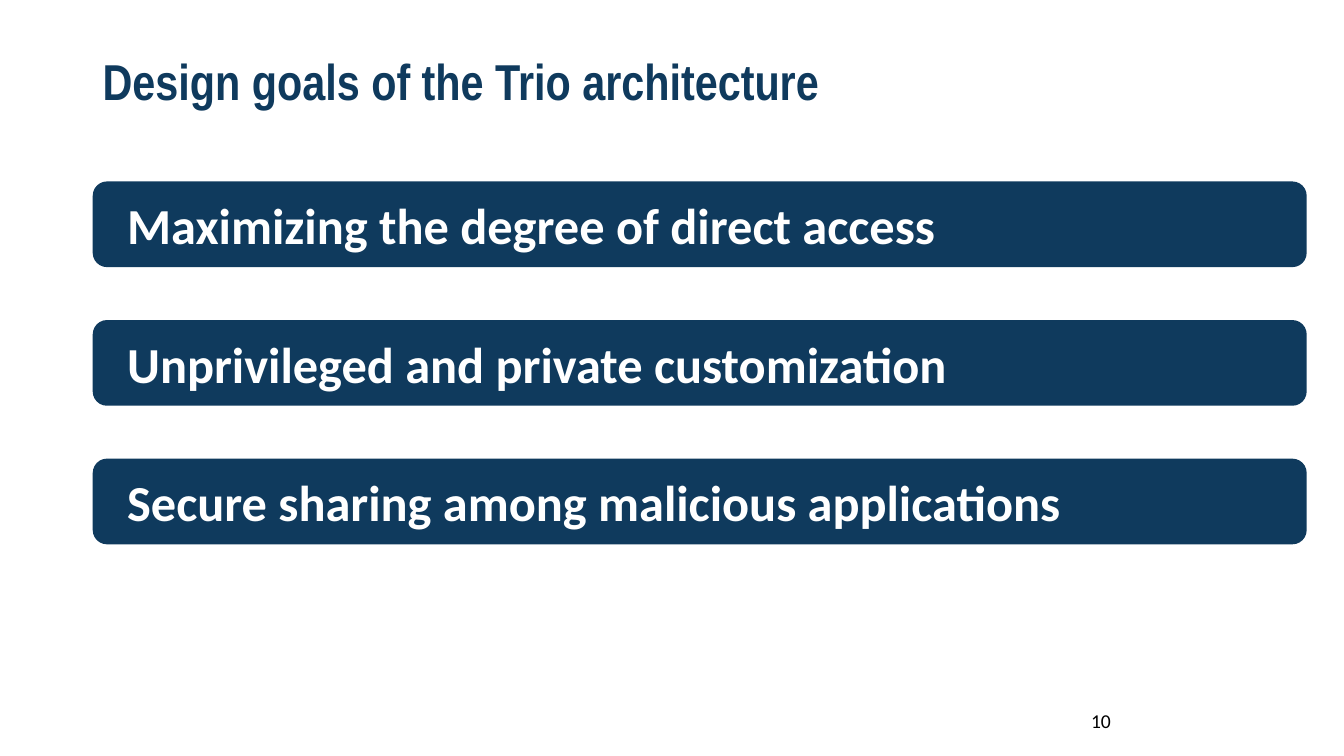
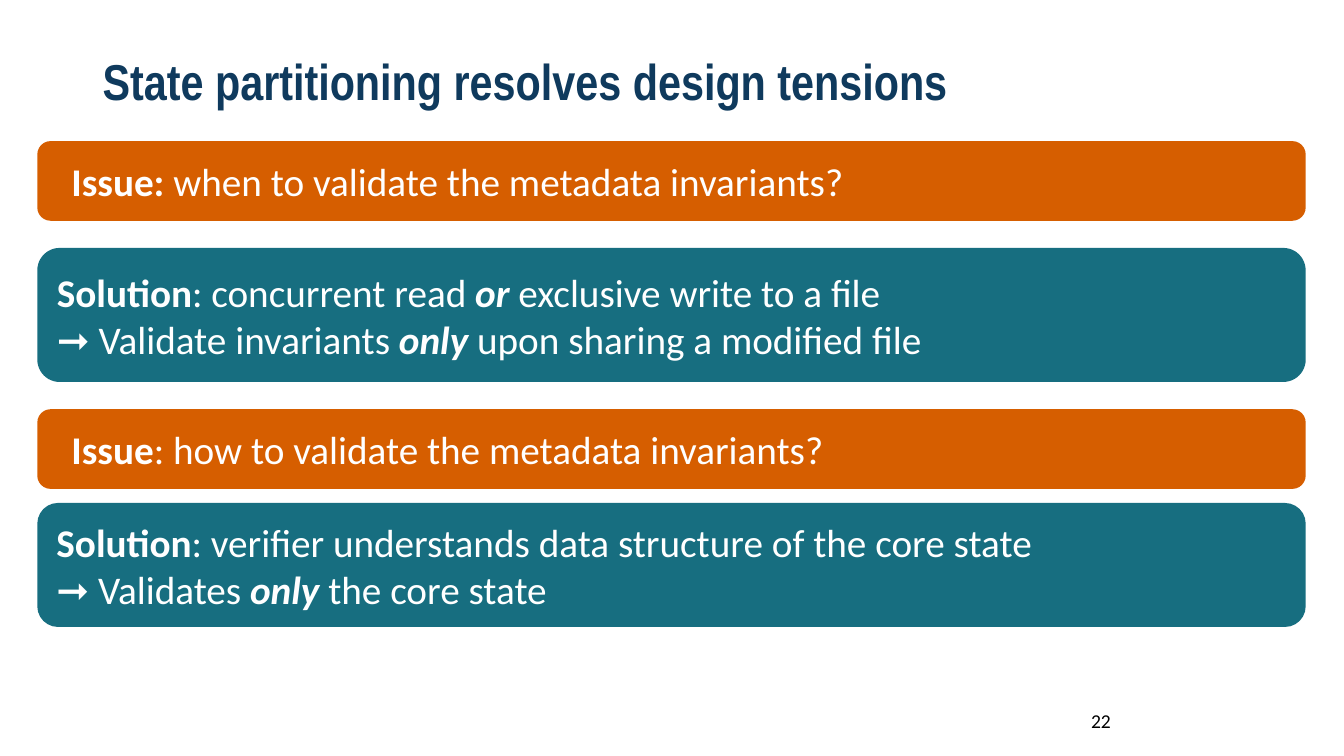
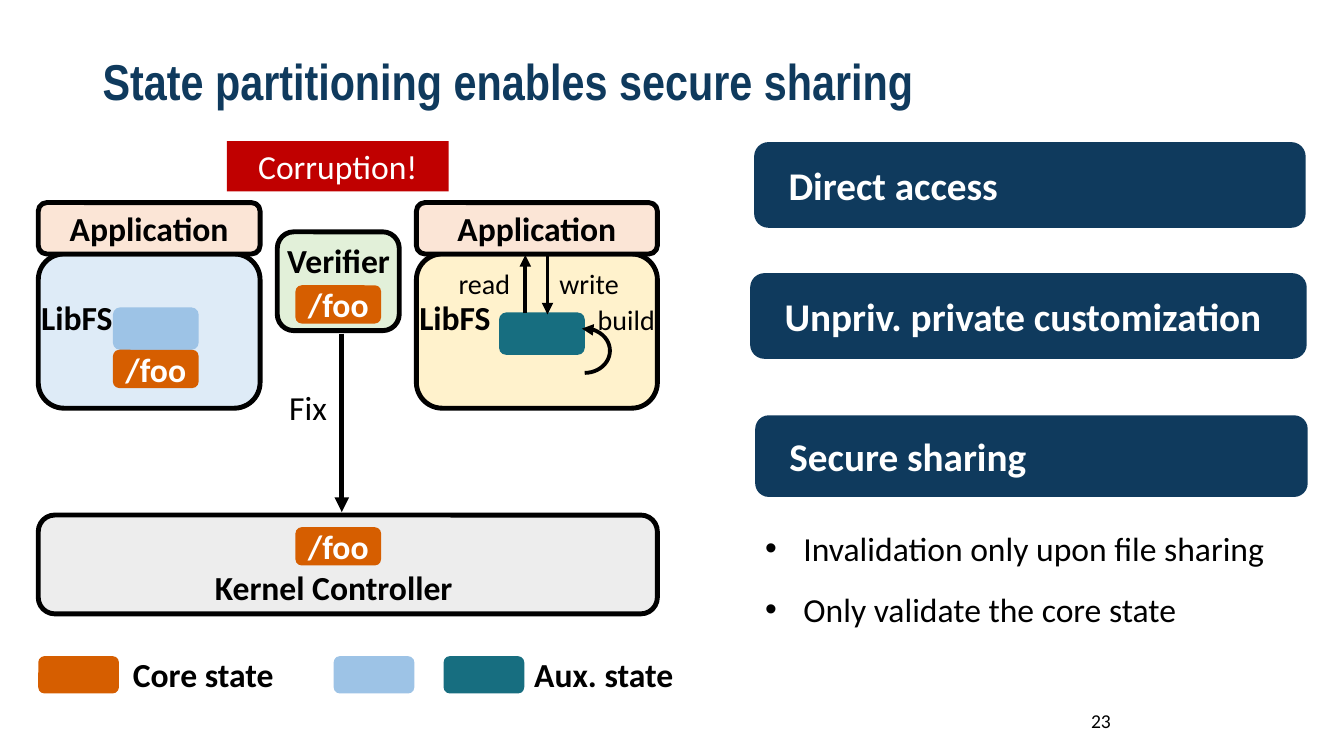
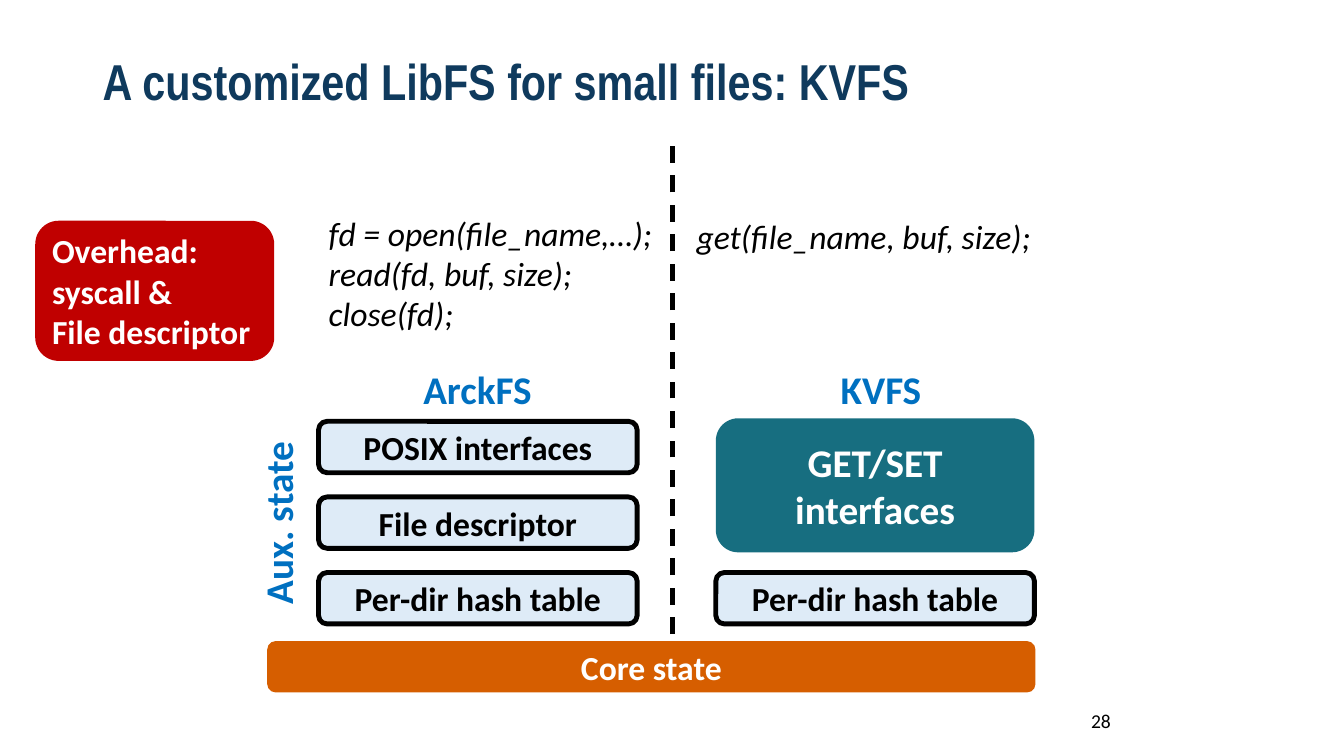
from lxml import etree
from pptx import Presentation
from pptx import util as u
from pptx.dml.color import RGBColor
from pptx.enum import dml, shapes, text
from pptx.oxml.ns import qn

NAVY, TEAL, ORANGE, RED = "0F3A5D", "176E80", "D65E00", "C00000"
SKY, ICE, CREAM, PEACH = "9DC3E6", "DEEBF7", "FFF2CC", "FBE5D6"
MINT, GREY, BLUE = "E2F0D9", "EDEDED", "0070C0"
BLACK, WHITE = "000000", "FFFFFF"
PLAIN_INSETS, BAND_INSETS, SOLUTION_INSETS = (0.1, 0.05), (0.3, 0.05), (0.13, 0.13)
LEFT, CENTER = text.PP_ALIGN.LEFT, text.PP_ALIGN.CENTER
TOP, MIDDLE = text.MSO_ANCHOR.TOP, text.MSO_ANCHOR.MIDDLE
BOLD, REGULAR = {"bold": True}, {}
STRESS = {"bold": True, "italic": True}
FRAME_WIDTH = 3.5


def rgb(color):
    """Turn a hex string into a colour."""
    return RGBColor.from_string(color)


def inside(box, left, top, width, height):
    """Return a box measured from the corner of another one."""
    return box[0] + left, box[1] + top, width, height


def write(frame, paragraphs, size, color, align=LEFT, anchor=MIDDLE,
          insets=PLAIN_INSETS, right=0.1, spacing=None, name="Calibri", **style):
    """Fill a text frame; a paragraph is a string or a list of (words, style)."""
    side, edge = insets
    layout = {"word_wrap": True, "vertical_anchor": anchor,
              "margin_left": u.Inches(side), "margin_right": u.Inches(right),
              "margin_top": u.Inches(edge), "margin_bottom": u.Inches(edge)}
    for key, value in layout.items():
        setattr(frame, key, value)
    for index, content in enumerate(paragraphs):
        paragraph = frame.add_paragraph() if index else frame.paragraphs[0]
        paragraph.alignment = align
        if spacing:
            paragraph.line_spacing = spacing
        runs = [(content, style)] if isinstance(content, str) else content
        for words, accent in runs:
            run = paragraph.add_run()
            run.text = words
            run.font.color.rgb = rgb(color)
            for key, value in {"name": name, "size": u.Pt(size), **accent}.items():
                setattr(run.font, key, value)


def label(slide, box, words, size=24, color=BLACK, anchor=TOP, **options):
    """Place free text, one paragraph for each item when given a list."""
    caption = slide.shapes.add_textbox(*map(u.Inches, box))
    paragraphs = [words] if isinstance(words, str) else words
    write(caption.text_frame, paragraphs, size, color, anchor=anchor, **options)
    return caption


def block(slide, box, fill, paragraphs=(), size=24, color=WHITE, framed=False,
          kind=shapes.MSO_SHAPE.ROUNDED_RECTANGLE, **options):
    """Draw a filled block, with a black frame or without a line."""
    body = slide.shapes.add_shape(kind, *map(u.Inches, box))
    body.shadow.inherit = False
    body.fill.solid()
    body.fill.fore_color.rgb = rgb(fill)
    if framed:
        body.line.color.rgb = rgb(BLACK)
        body.line.width = u.Pt(FRAME_WIDTH)
    else:
        body.line.fill.background()
    write(body.text_frame, paragraphs, size, color, **options)


def badge(slide, box, fill, words, color=WHITE, framed=False, size=24):
    """Draw a block with one centred bold caption."""
    block(slide, box, fill, [words], size, color, framed, align=CENTER, bold=True)


def band(slide, box, fill, content, size=28):
    """Draw a wide band whose text is indented from the left."""
    block(slide, box, fill, [content], size, insets=BAND_INSETS, bold=True)


def add_arrowhead(outline):
    """Put a triangle at the end of an outlined shape."""
    etree.SubElement(outline.line._get_or_add_ln(), qn("a:tailEnd"), type="triangle")


def rule(slide, start, end, width, arrow=True, dash=None):
    """Draw a straight black line or arrow."""
    stroke = slide.shapes.add_connector(
        shapes.MSO_CONNECTOR.STRAIGHT, *map(u.Inches, start + end))
    stroke.line.color.rgb = rgb(BLACK)
    stroke.line.width = u.Pt(width)
    if dash:
        stroke.line.dash_style = dash
    if arrow:
        add_arrowhead(stroke)
    etree.SubElement(stroke._element.spPr, qn("a:effectLst"))


def loop_arrow(slide, box):
    """Draw the half-round arrow that turns back upwards."""
    arc = slide.shapes.add_shape(shapes.MSO_SHAPE.ARC, *map(u.Inches, box))
    arc.shadow.inherit = False
    arc.adjustments[0], arc.adjustments[1] = 162, 58.275
    arc.fill.background()
    arc.line.color.rgb = rgb(BLACK)
    arc.line.width = u.Pt(2.75)
    arc._element.spPr.find(qn("a:xfrm")).set("flipV", "1")
    add_arrowhead(arc)


def start_slide(deck, title, number):
    """Add a blank slide with its title and page number."""
    slide = deck.slides.add_slide(deck.slide_layouts[6])
    label(slide, (0.92, 0.4, 12.04, 0.87), title, 36, NAVY, MIDDLE,
          spacing=0.9, name="Arial Narrow", bold=True)
    label(slide, (9.42, 6.95, 3, 0.4), str(number), 14, anchor=MIDDLE, align=CENTER)
    return slide


def goal_list(slide, box, goals):
    """Stack the design goals at an equal pitch."""
    left, top, width, height = box
    pitch = 1.375
    for row, goal in enumerate(goals):
        band(slide, (left, top + row * pitch, width, height), NAVY, goal, 36)


def issue_pair(slide, box, gap, issue, solution):
    """Place an issue band and the solution under it, filling the box."""
    left, top, width, height = box
    issue_height = 0.79
    band(slide, (left, top, width, issue_height), ORANGE, issue)
    offset = issue_height + gap
    block(slide, (left, top + offset, width, height - offset), TEAL, solution, 28,
          insets=SOLUTION_INSETS, right=0.13)


def process(slide, box, fill):
    """Draw an application on top of its library file system."""
    left, top, width, height = box
    header = 0.51
    block(slide, (left, top + header, width, height - header), fill, framed=True)
    badge(slide, (left, top, width, header), PEACH, "Application", BLACK, True)
    label(slide, inside(box, -0.07, 0.89, 0.99, 0.5), "LibFS", bold=True)


def foo_file(slide, left, top):
    """Draw the core state of the file."""
    badge(slide, (left, top, 0.85, 0.38), ORANGE, "/foo")


def corrupting_process(slide, box):
    """Draw the process whose file is corrupt."""
    process(slide, box, ICE)
    block(slide, inside(box, 0.74, 1.04, 0.85, 0.42), SKY)
    foo_file(slide, box[0] + 0.74, box[1] + 1.46)


def rebuilding_process(slide, box):
    """Draw the process that reads, writes and builds its auxiliary state."""
    process(slide, box, CREAM)
    left, top = box[:2]
    block(slide, inside(box, 0.82, 1.09, 0.85, 0.42), TEAL)
    loop_arrow(slide, inside(box, 1.42, 1.25, 0.5, 0.44))
    rule(slide, (left + 1.08, top + 1.1), (left + 1.08, top + 0.52), 2.75)
    rule(slide, (left + 1.3, top + 0.53), (left + 1.3, top + 1.11), 2.75)
    for words, x, y, width in (("read", 0.32, 0.58, 0.83), ("write", 1.32, 0.58, 0.92),
                               ("build", 1.7, 0.94, 0.89)):
        label(slide, inside(box, x, y, width, 0.44), words, 20)


def verifier(slide, box):
    """Draw the verifier and the arrow by which it fixes the file."""
    left, top = box[:2]
    block(slide, box, MINT, framed=True)
    label(slide, inside(box, 0, 0.03, 1.32, 0.5), "Verifier", bold=True)
    foo_file(slide, left + 0.18, top + 0.53)
    rule(slide, (left + 0.64, top + 1.01), (left + 0.64, top + 2.78), FRAME_WIDTH)
    label(slide, inside(box, 0.02, 1.49, 0.64, 0.5), "Fix")


def kernel(slide, box):
    """Draw the kernel controller with its copy of the file."""
    block(slide, box, GREY, framed=True)
    label(slide, inside(box, 1.55, 0.47, 2.76, 0.5), "Kernel Controller",
          align=CENTER, bold=True)
    foo_file(slide, box[0] + 2.55, box[1] + 0.12)


def legend(slide, box):
    """Explain the colours of the two kinds of state."""
    for x, fill in ((0, ORANGE), (2.93, SKY), (4.02, TEAL)):
        block(slide, inside(box, x, 0.07, 0.8, 0.37), fill)
    for x, words in ((0.84, "Core state"), (4.82, "Aux. state")):
        label(slide, inside(box, x, 0, 1.63, 0.5), words, bold=True)


def architecture(slide, box):
    """Draw the processes, verifier, kernel and legend of the left half."""
    block(slide, inside(box, 1.87, 0, 2.2, 0.5), RED, ["Corruption!"],
          align=CENTER, anchor=TOP, kind=shapes.MSO_SHAPE.RECTANGLE)
    corrupting_process(slide, inside(box, 0, 0.61, 2.2, 2.04))
    rebuilding_process(slide, inside(box, 3.75, 0.61, 2.39, 2.04))
    kernel(slide, inside(box, 0, 3.71, 6.14, 0.98))
    verifier(slide, inside(box, 2.37, 0.9, 1.21, 0.98))
    legend(slide, inside(box, 0, 5.04, 6.45, 0.5))


def benefits(slide, box):
    """List the three goals, with the reasons for the last one."""
    for words, x, y, width, height in (
            ("Direct access", 0.04, 0, 5.47, 0.85),
            ("Unpriv. private customization", 0, 1.3, 5.52, 0.85),
            ("Secure sharing", 0.05, 2.71, 5.48, 0.81)):
        band(slide, inside(box, x, y, width, height), NAVY, words)
    reasons = label(slide, inside(box, 0.05, 3.58, 5.59, 0.75),
                    ["Invalidation only upon file sharing",
                     "Only validate the core state"], spacing=1.5)
    indent = u.Inches(0.38)
    for reason in reasons.text_frame.paragraphs:
        settings = reason._p.get_or_add_pPr()
        settings.set("marL", str(indent))
        settings.set("indent", str(-indent))
        etree.SubElement(settings, qn("a:buFont"), typeface="Arial")
        etree.SubElement(settings, qn("a:buChar"), char="•")


def layer(slide, box, words):
    """Draw one framed layer of a file system."""
    badge(slide, box, ICE, words, BLACK, True)


def arck_stack(slide, box):
    """Draw the calls, name and layers of the general file system."""
    label(slide, inside(box, -0.07, 0, 3.58, 1.31),
          ["fd = open(file_name,…);", "read(fd, buf, size);", "close(fd);"],
          insets=(0.17, 0.05), italic=True)
    label(slide, inside(box, 0.94, 1.52, 1.55, 0.57), "ArckFS", 28, BLUE, bold=True)
    for row, words in enumerate(("POSIX interfaces", "File descriptor",
                                 "Per-dir hash table")):
        layer(slide, inside(box, 0, 2.12 + 0.75 * row, box[2], 0.51), words)


def kv_stack(slide, box):
    """Draw the call, name and layers of the key-value file system."""
    label(slide, inside(box, -0.29, 0.03, 3.92, 0.5), "get(file_name, buf, size);",
          italic=True)
    label(slide, inside(box, 1.14, 1.52, 1.05, 0.57), "KVFS", 28, BLUE, bold=True)
    badge(slide, inside(box, 0, 2.09, box[2], 1.33), TEAL, "GET/SET interfaces", size=28)
    layer(slide, inside(box, 0, 3.62, box[2], 0.51), "Per-dir hash table")


def goals_slide(deck):
    """Build the slide of design goals."""
    slide = start_slide(deck, "Design goals of the Trio architecture", 10)
    goal_list(slide, (0.92, 1.8, 12.04, 0.85),
              ["Maximizing the degree of direct access",
               "Unprivileged and private customization",
               "Secure sharing among malicious applications"])


def tensions_slide(deck):
    """Build the slide of issues and solutions."""
    slide = start_slide(deck, "State partitioning resolves design tensions", 22)
    issue_pair(slide, (0.37, 1.4, 12.58, 2.39), 0.27,
               [("Issue:", BOLD), (" when to validate the metadata invariants?", REGULAR)],
               [[("Solution", BOLD), (": concurrent read ", REGULAR), ("or", STRESS),
                 (" exclusive write to a file", REGULAR)],
                [("➞ Validate invariants ", REGULAR), ("only", STRESS),
                 (" upon sharing a modified file", REGULAR)]])
    issue_pair(slide, (0.37, 4.06, 12.58, 2.16), 0.14,
               [("Issue", BOLD), (": how to validate the metadata invariants?", REGULAR)],
               [[("Solution", BOLD),
                 (": verifier understands data structure of the core state", REGULAR)],
                [("➞ Validates ", REGULAR), ("only", STRESS),
                 (" the core state", REGULAR)]])


def sharing_slide(deck):
    """Build the slide of secure sharing."""
    slide = start_slide(deck, "State partitioning enables secure sharing", 23)
    architecture(slide, (0.38, 1.4, 6.45, 5.54))
    benefits(slide, (7.44, 1.41, 5.64, 4.33))


def small_files_slide(deck):
    """Build the slide that compares the two file systems."""
    slide = start_slide(deck, "A customized LibFS for small files: KVFS", 28)
    badge(slide, (2.65, 6.36, 7.62, 0.51), ORANGE, "Core state")
    arck_stack(slide, (3.16, 2.06, 3.16, 4.13))
    kv_stack(slide, (7.1, 2.06, 3.16, 4.13))
    rule(slide, (6.67, 6.29), (6.67, 1.39), 3, arrow=False, dash=dml.MSO_LINE.DASH)
    side_label = label(slide, (1.79, 4.84, 1.93, 0.57), "Aux. state", 28, BLUE, bold=True)
    side_label.rotation = 270
    block(slide, (0.35, 2.19, 2.37, 1.39), RED,
          ["Overhead: syscall &", "File descriptor"], bold=True)


def main():
    """Build the deck and save it."""
    deck = Presentation()
    deck.slide_width, deck.slide_height = u.Inches(13.33), u.Inches(7.5)
    for build in (goals_slide, tensions_slide, sharing_slide, small_files_slide):
        build(deck)
    deck.save("out.pptx")


if __name__ == "__main__":
    main()
